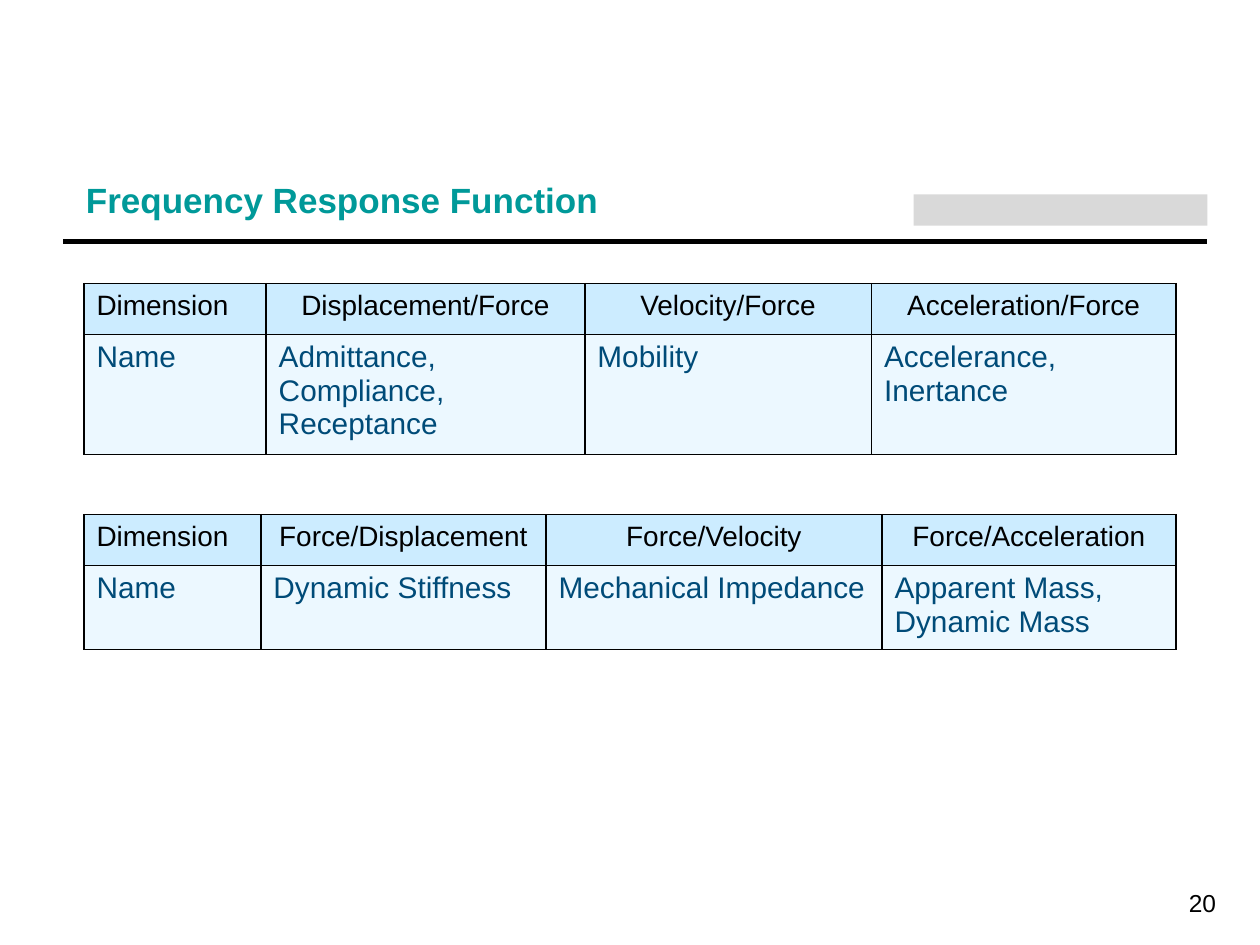
from lxml import etree
from pptx import Presentation
from pptx.dml.color import RGBColor
from pptx.enum.shapes import MSO_CONNECTOR, MSO_SHAPE
from pptx.enum.text import MSO_ANCHOR, PP_ALIGN
from pptx.oxml import parse_xml
from pptx.util import Inches, Pt

LEFT, CENTER, RIGHT = PP_ALIGN.LEFT, PP_ALIGN.CENTER, PP_ALIGN.RIGHT
MIDDLE = MSO_ANCHOR.MIDDLE
STRAIGHT = MSO_CONNECTOR.STRAIGHT
RECT = MSO_SHAPE.RECTANGLE
NS = "http://schemas.openxmlformats.org/drawingml/2006/main"

deck = Presentation()
deck.slide_width = Inches(10)
deck.slide_height = Inches(7.5)
slide = deck.slides.add_slide(deck.slide_layouts[6])
unit = deck.slide_width / 120


def grid(*spans):
    return [round(span * unit) for span in spans]


def style(frame, text, size, color, align, bold=False):
    frame.text = text
    for para in frame.paragraphs:
        para.alignment = align
        for run in para.runs:
            run.font.name = "Arial"
            run.font.size = Pt(size)
            run.font.bold = bold
            run.font.color.rgb = RGBColor.from_string(color)


block = slide.shapes.add_shape(RECT, *grid(87, 18.5, 28, 3))
block.shadow.inherit = False
block.fill.solid()
block.fill.fore_color.rgb = RGBColor.from_string("D9D9D9")
block.line.fill.background()

rule = slide.shapes.add_connector(STRAIGHT, *grid(6, 23, 115, 23))
rule.line.width = Pt(3)
rule.line.color.rgb = RGBColor.from_string("000000")
etree.SubElement(rule._element.spPr, f"{{{NS}}}effectLst")

labels = [
    ((7, 12, 80, 15), "Frequency Response Function", 20, "009999", LEFT, True, 0.7),
    ((92, 83, 25, 6), "20", 14, "000000", RIGHT, False, 1),
]
for box, text, size, color, align, bold, space in labels:
    frame = slide.shapes.add_textbox(*grid(*box)).text_frame
    frame.word_wrap = True
    frame.vertical_anchor = MIDDLE
    style(frame, text, size, color, align, bold)
    frame.paragraphs[0].line_spacing = space

tables = [
    (27, (17.35, 30.35, 27.3, 29), [
        ["Dimension", "Displacement/Force", "Velocity/Force", "Acceleration/Force"],
        ["Name", "Admittance,\nCompliance,\nReceptance", "Mobility", "Accelerance,\nInertance"],
    ]),
    (49, (16.85, 27.15, 32, 28), [
        ["Dimension", "Force/Displacement", "Force/Velocity", "Force/Acceleration"],
        ["Name", "Dynamic Stiffness", "Mechanical Impedance", "Apparent Mass,\nDynamic Mass"],
    ]),
]
rows = (4.87, 4.87)
looks = [("CCECFF", 16, "000000", CENTER), ("ECF8FF", 17, "004B78", LEFT)]
for top, cols, words in tables:
    table = slide.shapes.add_table(2, 4, *grid(8, top, sum(cols), sum(rows))).table
    for col, width in zip(table.columns, grid(*cols)):
        col.width = width
    for row, height, texts, look in zip(table.rows, grid(*rows), words, looks):
        row.height = height
        fill, size, color, align = look
        for spot, (cell, text) in enumerate(zip(row.cells, texts)):
            style(cell.text_frame, text, size, color, align if spot else LEFT)
            cell.fill.solid()
            cell.fill.fore_color.rgb = RGBColor.from_string(fill)
            props = cell._tc.get_or_add_tcPr()
            for place, side in enumerate("LRTB"):
                props.insert(place, parse_xml(
                    f'<a:ln{side} xmlns:a="{NS}" w="{Pt(1)}"><a:solidFill>'
                    f'<a:srgbClr val="000000"/></a:solidFill></a:ln{side}>'))

deck.save("out.pptx")
